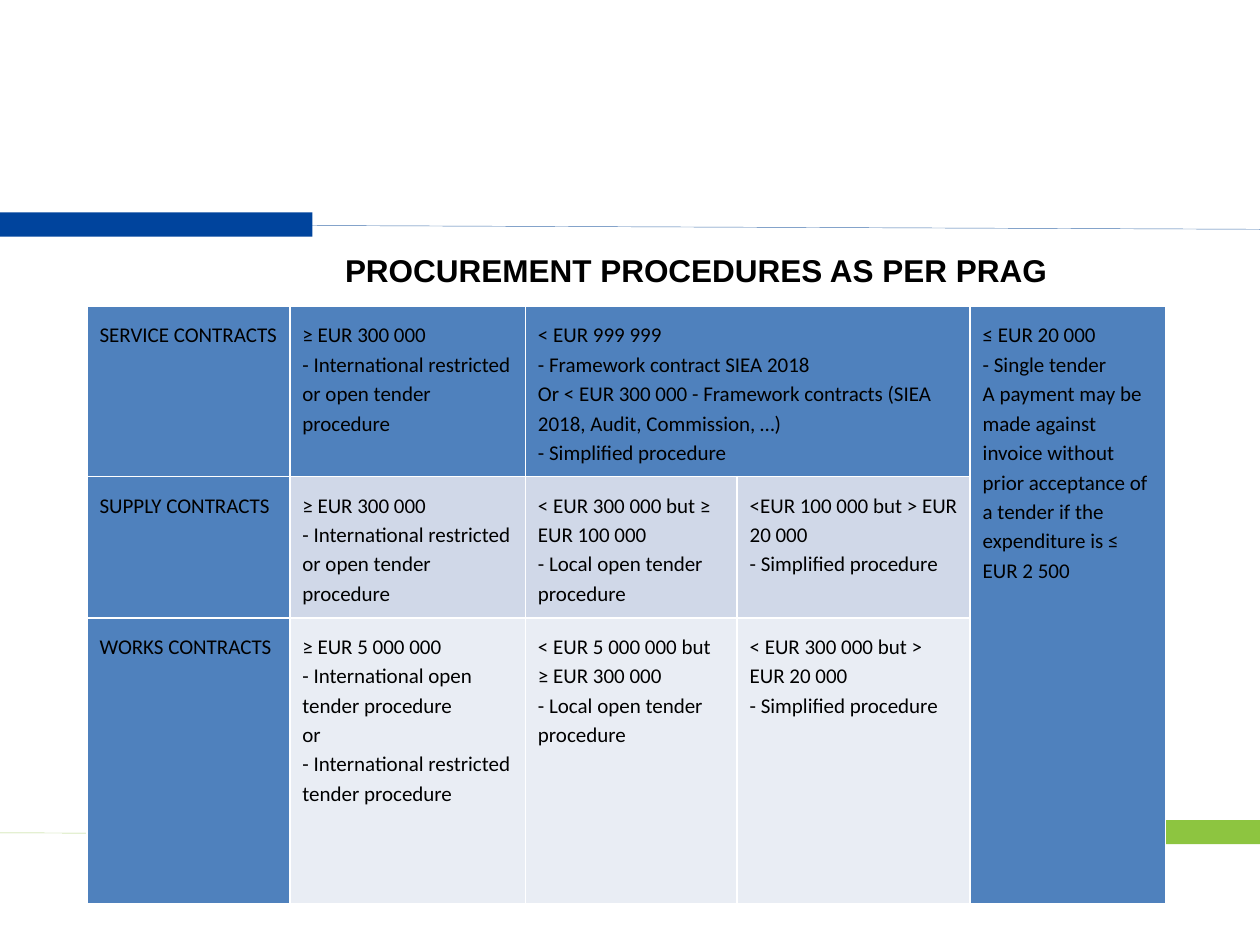
from lxml import etree
from pptx import Presentation
from pptx.dml.color import RGBColor
from pptx.enum import shapes
from pptx.oxml import ns
from pptx.util import Pt

BLACK = RGBColor(0x00, 0x00, 0x00)
WHITE = RGBColor(0xFF, 0xFF, 0xFF)
NAVY = RGBColor(0x00, 0x44, 0x9D)
NAVY_LINE = RGBColor(0x43, 0x72, 0xAF)
GREEN = RGBColor(0x8D, 0xC5, 0x40)
GREEN_LINE = RGBColor(0xB5, 0xD7, 0x82)
BLUE = RGBColor(0x4F, 0x81, 0xBD)
PALE_BLUE = RGBColor(0xD0, 0xD8, 0xE8)
PALE_GREY = RGBColor(0xE9, 0xED, 0xF4)

TITLE = "PROCUREMENT PROCEDURES AS PER PRAG"
ROWS = [
    [
        ["SERVICE CONTRACTS"],
        ["≥ EUR 300 000", "- International restricted or open tender procedure"],
        ["< EUR 999 999", "- Framework contract SIEA 2018",
         "Or < EUR 300 000 - Framework contracts (SIEA 2018, Audit, Commission, …)",
         "- Simplified procedure"],
        None,
        ["≤ EUR 20 000", "- Single tender",
         "A payment may be made against invoice without prior acceptance of a tender "
         "if the expenditure is ≤ EUR 2 500"],
    ],
    [
        ["SUPPLY CONTRACTS"],
        ["≥ EUR 300 000", "- International restricted or open tender procedure"],
        ["< EUR 300 000 but ≥ EUR 100 000", "- Local open tender procedure"],
        ["<EUR 100 000 but > EUR 20 000", "- Simplified procedure"],
        None,
    ],
    [
        ["WORKS CONTRACTS"],
        ["≥ EUR 5 000 000", "- International open tender procedure", "or",
         "- International restricted tender procedure"],
        ["< EUR 5 000 000 but ≥ EUR 300 000", "- Local open tender procedure"],
        ["< EUR 300 000 but > EUR 20 000", "- Simplified procedure"],
        None,
    ],
]
ROW_FILLS = [BLUE, PALE_BLUE, PALE_GREY]
COLUMN_WIDTHS = [115.92, 134.64, 120.96, 133.2, 111.6]
ROW_HEIGHTS = [95.76, 79.92, 112.32]
MERGES = [((0, 2), (0, 3)), ((0, 4), (2, 4))]
LINES = [((0.72, 128.16), (720, 131.04), NAVY_LINE),
         ((720, 478.08), (0, 475.92), GREEN_LINE)]
BARS = [((0, 121.4, 178.56, 13.8), NAVY), ((563.76, 468.6, 156.24, 13.8), GREEN)]


def write_text(frame, lines, font="Calibri", size=12, bold=False, spacing=None):
    frame.word_wrap = True
    for index, line in enumerate(lines):
        paragraph = frame.paragraphs[0] if index == 0 else frame.add_paragraph()
        paragraph.line_spacing = spacing
        run = paragraph.add_run()
        run.text = line
        run.font.name = font
        run.font.size = Pt(size)
        run.font.bold = bold
        run.font.color.rgb = BLACK


def add_line(slide, start, end, color):
    connector = slide.shapes.add_connector(
        shapes.MSO_CONNECTOR.STRAIGHT, *map(Pt, start + end))
    connector.line.color.rgb = color
    connector.line.width = Pt(0.25)
    etree.SubElement(connector._element.spPr, ns.qn("a:effectLst"))


def add_bar(slide, box, color):
    bar = slide.shapes.add_shape(shapes.MSO_SHAPE.RECTANGLE, *map(Pt, box))
    bar.shadow.inherit = False
    bar.fill.solid()
    bar.fill.fore_color.rgb = color
    bar.line.fill.background()


def style_cell(cell, color):
    properties = cell._tc.get_or_add_tcPr()
    for side in ("lnL", "lnR", "lnT", "lnB"):
        border = etree.SubElement(properties, ns.qn(f"a:{side}"), w=str(Pt(1)))
        fill = etree.SubElement(border, ns.qn("a:solidFill"))
        etree.SubElement(fill, ns.qn("a:srgbClr"), val=str(WHITE))
    cell.fill.solid()
    cell.fill.fore_color.rgb = color
    cell.margin_left = cell.margin_right = Pt(7.2)
    cell.margin_top = cell.margin_bottom = Pt(7.2)


def add_procedures(slide):
    table = slide.shapes.add_table(
        len(ROWS), len(COLUMN_WIDTHS), Pt(49.68), Pt(175.2),
        Pt(sum(COLUMN_WIDTHS)), Pt(sum(ROW_HEIGHTS))).table
    table.first_row = table.horz_banding = False
    for column, width in zip(table.columns, COLUMN_WIDTHS):
        column.width = Pt(width)
    for row, height in zip(table.rows, ROW_HEIGHTS):
        row.height = Pt(height)
    for first, last in MERGES:
        table.cell(*first).merge(table.cell(*last))
    last_column = len(COLUMN_WIDTHS) - 1
    for row_index, row in enumerate(ROWS):
        for column_index, lines in enumerate(row):
            cell = table.cell(row_index, column_index)
            edge = column_index in (0, last_column)
            style_cell(cell, BLUE if edge else ROW_FILLS[row_index])
            if lines:
                write_text(cell.text_frame, lines, spacing=1.15)


def main():
    presentation = Presentation()
    presentation.slide_width, presentation.slide_height = Pt(720), Pt(540)
    slide = presentation.slides.add_slide(presentation.slide_layouts[6])
    for line, bar in zip(LINES, BARS):
        add_line(slide, *line)
        add_bar(slide, *bar)
    title = slide.shapes.add_textbox(Pt(190.08), Pt(139.68), Pt(492.48), Pt(28.8))
    write_text(title.text_frame, [TITLE], font="Arial", size=18, bold=True)
    add_procedures(slide)
    presentation.save("out.pptx")


if __name__ == "__main__":
    main()
